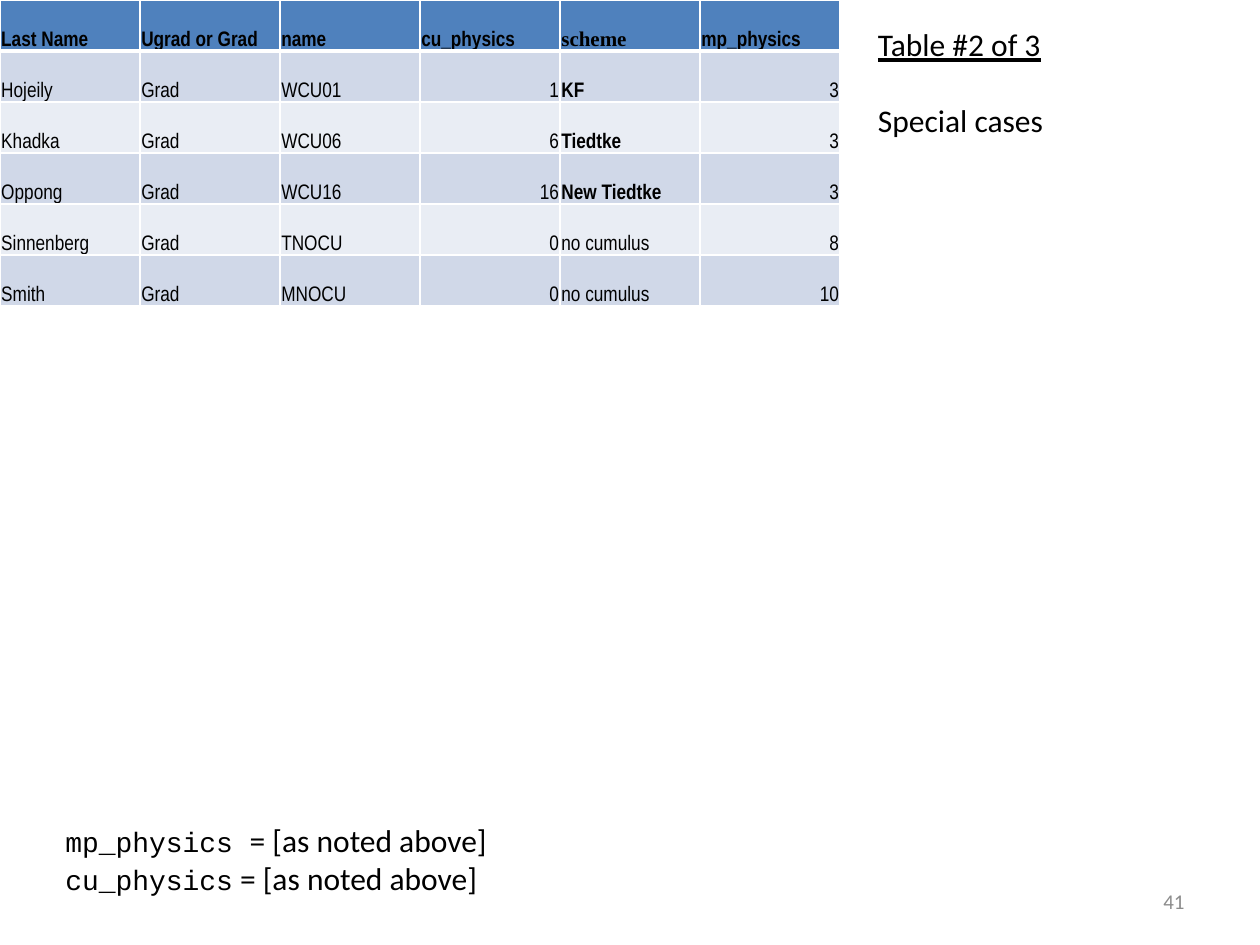
from dataclasses import dataclass

from lxml.etree import SubElement
from pptx import Presentation
from pptx.dml.color import RGBColor as Color
from pptx.enum.text import MSO_ANCHOR as Anchor, PP_ALIGN as Align
from pptx.oxml.ns import qn
from pptx.util import Inches, Pt


@dataclass(frozen=True)
class Theme:
    black: str = "000000"
    white: str = "FFFFFF"
    gray: str = "8C8C8C"
    header: str = "4F81BD"
    bands: tuple[str, str] = ("D0D8E8", "E9EDF4")
    body_font: str = "Calibri"
    table_font: str = "Arial Narrow"
    scheme_font: str = "Times New Roman"
    code_font: str = "Courier New"
    body_size: int = 18
    code_size: int = 16
    small_size: int = 12
    thin_line: int = 1
    thick_line: int = 3


THEME = Theme()


@dataclass(frozen=True)
class Span:
    text: str
    font: str = THEME.body_font
    size: int = THEME.body_size
    color: str = THEME.black
    bold: bool = False
    underline: bool = False


@dataclass(frozen=True)
class Line:
    spans: tuple[Span, ...]
    align: Align = Align.LEFT
    space_before: int = 0


@dataclass(frozen=True)
class TextBlock:
    left: float
    top: float
    width: float
    height: float
    lines: tuple[Line, ...]
    anchor: Anchor = Anchor.TOP
    wrap: bool = False


def code_line(name: str, rest: str) -> Line:
    return Line((Span(name, THEME.code_font, THEME.code_size), Span(rest)))


HEADINGS = ("Last Name", "Ugrad or Grad", "name", "cu_physics", "scheme", "mp_physics")
STUDENTS = (
    ("Hojeily", "Grad", "WCU01", 1, "KF", 3),
    ("Khadka", "Grad", "WCU06", 6, "Tiedtke", 3),
    ("Oppong", "Grad", "WCU16", 16, "New Tiedtke", 3),
    ("Sinnenberg", "Grad", "TNOCU", 0, "no cumulus", 8),
    ("Smith", "Grad", "MNOCU", 0, "no cumulus", 10),
)
SCHEME_COLUMN = HEADINGS.index("scheme")
TABLE_WIDTH, TABLE_HEIGHT = 6.67, 2.43

PAGE_NUMBER = TextBlock(
    7.17, 6.95, 2.33, 0.4,
    (Line((Span("41", size=THEME.small_size, color=THEME.gray),), Align.RIGHT),),
    Anchor.MIDDLE, True,
)
CAPTION = TextBlock(
    6.87, 0.15, 1.53, 1.01,
    (
        Line((Span("Table #2 of 3", underline=True),)),
        Line((Span("Special cases"),), space_before=22),
    ),
)
PHYSICS_NOTES = TextBlock(
    0.42, 6.47, 3.59, 0.71,
    (
        code_line("mp_physics ", "= [as noted above]"),
        code_line("cu_physics", " = [as noted above]"),
    ),
)


def write_line(para, line: Line) -> None:
    para.alignment = line.align
    para.space_before = Pt(line.space_before)
    for span in line.spans:
        run = para.add_run()
        run.text = span.text
        font = run.font
        font.name, font.size = span.font, Pt(span.size)
        font.bold, font.underline = span.bold, span.underline
        font.color.rgb = Color.from_string(span.color)


def draw_text(page, block: TextBlock) -> None:
    box = page.shapes.add_textbox(
        Inches(block.left), Inches(block.top), Inches(block.width), Inches(block.height)
    )
    frame = box.text_frame
    frame.word_wrap = block.wrap
    frame.vertical_anchor = block.anchor
    for index, line in enumerate(block.lines):
        para = frame.add_paragraph() if index else frame.paragraphs[0]
        write_line(para, line)


def draw_borders(cell, top: int, bottom: int) -> None:
    properties = cell._tc.get_or_add_tcPr()
    widths = {"lnL": THEME.thin_line, "lnR": THEME.thin_line, "lnT": top, "lnB": bottom}
    for side, width in widths.items():
        border = SubElement(properties, qn(f"a:{side}"), w=str(Pt(width)))
        fill = SubElement(border, qn("a:solidFill"))
        SubElement(fill, qn("a:srgbClr"), val=THEME.white)


def draw_cell(cell, row: int, column: int, value: str | int) -> None:
    is_header = row == 0
    is_scheme = column == SCHEME_COLUMN
    draw_borders(
        cell,
        THEME.thick_line if row == 1 else THEME.thin_line,
        THEME.thick_line if is_header else THEME.thin_line,
    )
    cell.fill.solid()
    fill = THEME.header if is_header else THEME.bands[(row - 1) % 2]
    cell.fill.fore_color.rgb = Color.from_string(fill)
    cell.vertical_anchor = Anchor.BOTTOM
    cell.margin_left = cell.margin_right = cell.margin_top = Inches(0.01)
    cell.margin_bottom = Inches(0)
    span = Span(
        str(value),
        THEME.scheme_font if is_header and is_scheme else THEME.table_font,
        THEME.small_size,
        bold=is_header or (is_scheme and value != "no cumulus"),
    )
    align = Align.RIGHT if isinstance(value, int) else Align.LEFT
    write_line(cell.text_frame.paragraphs[0], Line((span,), align))


def draw_table(page) -> None:
    rows = (HEADINGS, *STUDENTS)
    table = page.shapes.add_table(
        len(rows), len(HEADINGS), Inches(0), Inches(0),
        Inches(TABLE_WIDTH), Inches(TABLE_HEIGHT),
    ).table
    for row, values in enumerate(rows):
        for column, value in enumerate(values):
            draw_cell(table.cell(row, column), row, column, value)


def main() -> None:
    deck = Presentation()
    deck.slide_width, deck.slide_height = Inches(10), Inches(7.5)
    page = deck.slides.add_slide(deck.slide_layouts[6])
    draw_text(page, PAGE_NUMBER)
    draw_table(page)
    draw_text(page, CAPTION)
    draw_text(page, PHYSICS_NOTES)
    deck.save("out.pptx")


if __name__ == "__main__":
    main()
